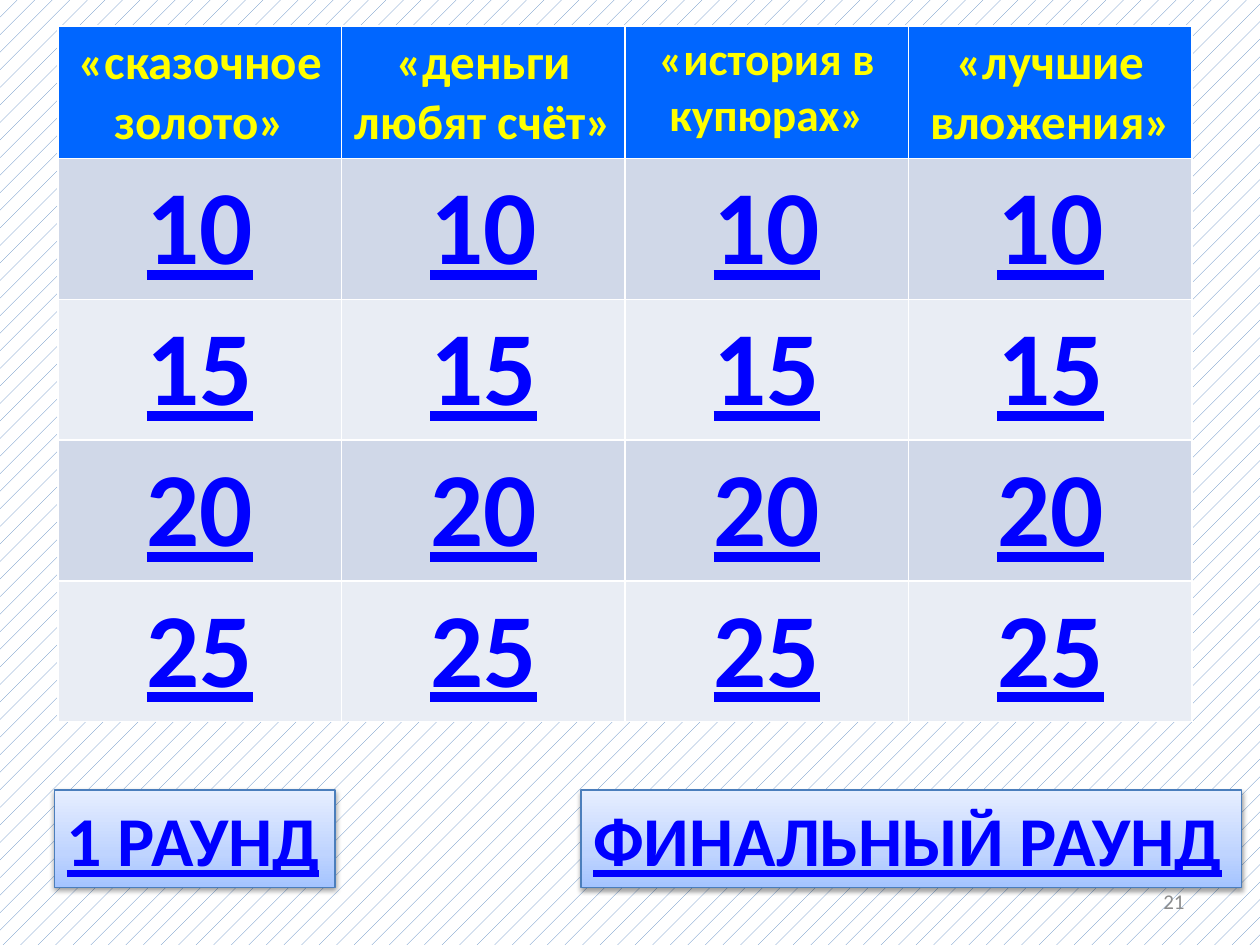
import copy
import pptx
import pptx.dml.color
import pptx.enum.dml
import pptx.enum.shapes
import pptx.enum.text
import pptx.oxml
import pptx.oxml.ns
import pptx.util

Pt = pptx.util.Pt
ALIGN = pptx.enum.text.PP_ALIGN
ANCHOR = pptx.enum.text.MSO_ANCHOR

# Content
THEMES = [("«сказочное золото»", 28), ("«деньги любят счёт»", 28),
          ("«история в купюрах»", 26), ("«лучшие вложения»", 28)]
POINTS = ["10", "15", "20", "25"]
BUTTONS = [("ФИНАЛЬНЫЙ РАУНД", 332, 377.5), ("1 РАУНД", 31, 160.5)]  # text, left, width
SLIDE_NUMBER = "21"

# Formats
HEADER_FILL = "0066FF"
BAND_FILLS = ["D0D8E8", "E9EDF4"]
HEADER_FONT = {"bold": True, "color": "FFFF00"}
POINTS_FONT = {"size": Pt(60), "bold": True, "underline": True, "color": "0000FF"}
BUTTON_FONT = {**POINTS_FONT, "size": Pt(40)}
NUMBER_FONT = {"size": Pt(12), "color": "8C8C8C"}
BUTTON_STOPS = [(0, "A4C4FF"), (0.35, "BFD4FF"), (1, "E6EEFF")]
SHADOW = (
    f'<a:effectLst {pptx.oxml.ns.nsdecls("a")}>'
    f'<a:outerShdw blurRad="{Pt(3.1)}" dist="{Pt(1.6)}" dir="5400000" rotWithShape="0">'
    '<a:srgbClr val="000000"><a:alpha val="38000"/></a:srgbClr>'
    '</a:outerShdw></a:effectLst>')

# Layout
TABLE_LEFT, TABLE_TOP = 33.25, 15
COLUMN_WIDTH, HEADER_HEIGHT, ROW_HEIGHT = 162, 75.5, 80.4
BUTTON_TOP, BUTTON_HEIGHT = 451.5, 55.5


def color(value):
    return pptx.dml.color.RGBColor.from_string(value)


def write(text_frame, text, font_format, alignment):
    paragraph = text_frame.paragraphs[0]
    paragraph.alignment = alignment
    run = paragraph.add_run()
    run.text = text
    for name, value in {"name": "Calibri", **font_format}.items():
        if name == "color":
            run.font.color.rgb = color(value)
        else:
            setattr(run.font, name, value)


def fill_cell(cell, text, fill, font_format):
    cell.fill.solid()
    cell.fill.fore_color.rgb = color(fill)
    write(cell.text_frame, text, font_format, ALIGN.CENTER)


def add_button(slide, text, left, width):
    shape = slide.shapes.add_shape(
        pptx.enum.shapes.MSO_SHAPE.RECTANGLE,
        Pt(left), Pt(BUTTON_TOP), Pt(width), Pt(BUTTON_HEIGHT))
    shape.fill.gradient()
    shape.fill.gradient_angle = 90
    stop_list = shape._element.spPr.find(".//" + pptx.oxml.ns.qn("a:gsLst"))
    stop_list.append(copy.deepcopy(stop_list[0]))
    for stop, (position, value) in zip(shape.fill.gradient_stops, BUTTON_STOPS):
        stop.position = position
        stop.color.rgb = color(value)
    shape.line.color.rgb = color("4B7EBC")
    shape.line.width = Pt(0.75)
    shape._element.spPr.append(pptx.oxml.parse_xml(SHADOW))
    frame = shape.text_frame
    frame.word_wrap = False
    frame.auto_size = pptx.enum.text.MSO_AUTO_SIZE.SHAPE_TO_FIT_TEXT
    frame.vertical_anchor = ANCHOR.TOP
    write(frame, text, BUTTON_FONT, ALIGN.LEFT)


def main():
    presentation = pptx.Presentation()
    presentation.slide_width, presentation.slide_height = Pt(720), Pt(540)
    slide = presentation.slides.add_slide(presentation.slide_layouts[6])

    # Patterned background
    background = slide.background.fill
    background.patterned()
    background.pattern = pptx.enum.dml.MSO_PATTERN.PERCENT_5
    background.fore_color.rgb = color("4F81BD")
    background.back_color.rgb = color("FFFFFF")

    # Question board; the default table style draws the white borders
    heights = [HEADER_HEIGHT] + [ROW_HEIGHT] * len(POINTS)
    table = slide.shapes.add_table(
        len(heights), len(THEMES), Pt(TABLE_LEFT), Pt(TABLE_TOP),
        Pt(COLUMN_WIDTH * len(THEMES)), Pt(sum(heights))).table
    for row, height in zip(table.rows, heights):
        row.height = Pt(height)
    for column, (theme, size) in enumerate(THEMES):
        fill_cell(table.cell(0, column), theme, HEADER_FILL, {**HEADER_FONT, "size": Pt(size)})
        for row, points in enumerate(POINTS):
            fill_cell(table.cell(row + 1, column), points, BAND_FILLS[row % 2], POINTS_FONT)

    # Round buttons
    for text, left, width in BUTTONS:
        add_button(slide, text, left, width)

    # Slide number
    number = slide.shapes.add_textbox(Pt(516), Pt(500.5), Pt(168), Pt(28.75)).text_frame
    number.word_wrap = True
    number.vertical_anchor = ANCHOR.MIDDLE
    write(number, SLIDE_NUMBER, NUMBER_FONT, ALIGN.RIGHT)

    presentation.save("out.pptx")


if __name__ == "__main__":
    main()
